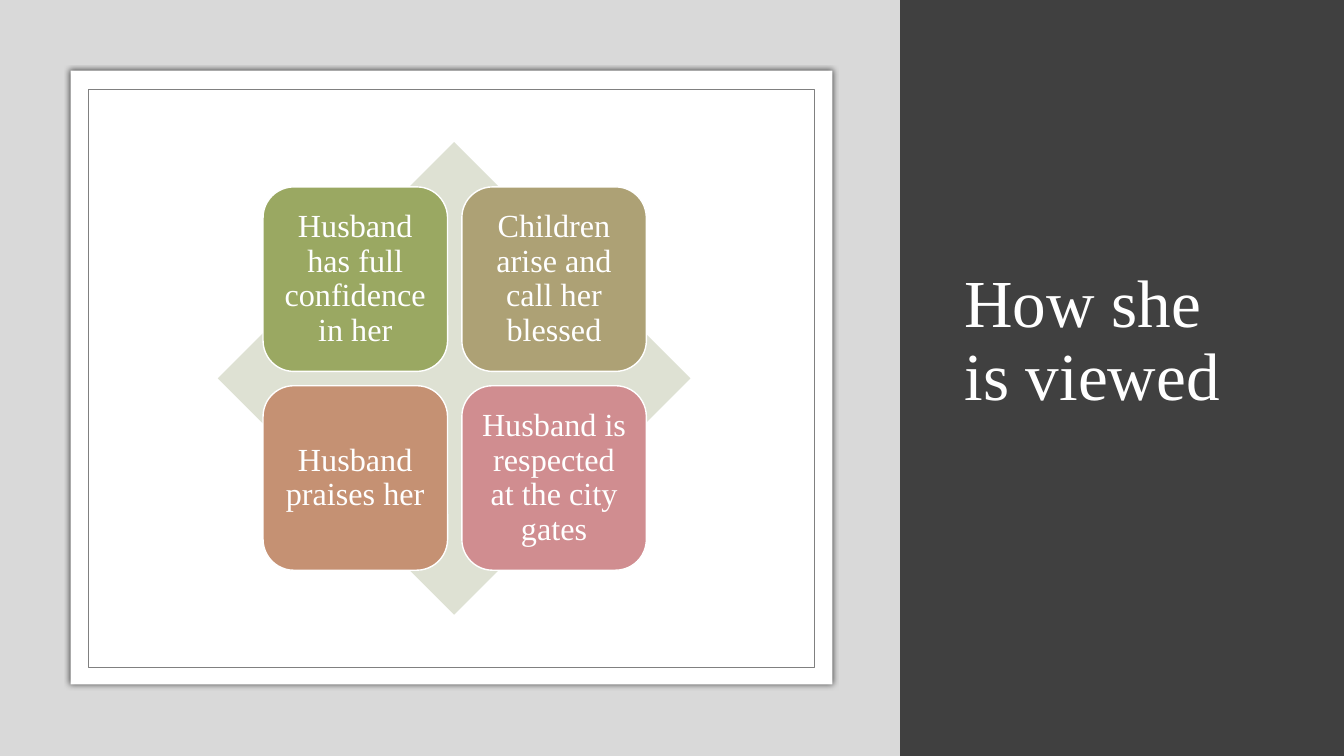
"""Builds the slide 'How she is viewed' with a four-tile matrix over a diamond."""
from lxml import etree
from pptx import Presentation
from pptx.dml.color import RGBColor
from pptx.enum.shapes import MSO_SHAPE
from pptx.enum.text import MSO_ANCHOR, MSO_AUTO_SIZE, PP_ALIGN
from pptx.oxml.ns import qn
from pptx.util import Cm, Pt

RECTANGLE = MSO_SHAPE.RECTANGLE
DIAMOND = MSO_SHAPE.DIAMOND
ROUNDED = MSO_SHAPE.ROUNDED_RECTANGLE
MIDDLE = MSO_ANCHOR.MIDDLE
NO_AUTOFIT = MSO_AUTO_SIZE.NONE
LEFT, CENTER = PP_ALIGN.LEFT, PP_ALIGN.CENTER

WIDTH, HEIGHT = 33.87, 19.05
TILE_SIZE, TILE_STEP = 4.65, 5.01
TILES_LEFT, TILES_TOP = 6.63, 4.71
VIEWS = [
    ("Husband has full confidence in her", "9AA862"),
    ("Children arise and call her blessed", "ADA175"),
    ("Husband praises her", "C59173"),
    ("Husband is respected at the city gates", "D08D90"),
]


def color(code):
    """Turn a hex string into a colour."""
    return RGBColor.from_string(code)


class SlideBuilder:
    """Holds the text style and the current slide."""

    font = "Times New Roman"
    text_color = "FFFFFF"

    def __init__(self, slide):
        """Start on the given slide."""
        self.slide = slide
        self.shapes = slide.shapes

    def panel(self, kind, left, top, width, height, fill, line=None, line_width=1, parent=None):
        """Add a filled shape, outlined only when a line colour is given."""
        shapes = parent.shapes if parent else self.shapes
        shape = shapes.add_shape(kind, Cm(left), Cm(top), Cm(width), Cm(height))
        shape.shadow.inherit = False
        shape.fill.solid()
        shape.fill.fore_color.rgb = color(fill)
        if line:
            shape.line.color.rgb = color(line)
            shape.line.width = Pt(line_width)
        else:
            shape.line.fill.background()
        return shape

    def glow(self, shape, code, opacity, blur):
        """Give a shape a soft shadow with no offset."""
        effects = shape._element.spPr.find(qn("a:effectLst"))
        shadow = etree.SubElement(effects, qn("a:outerShdw"), blurRad=str(Pt(blur)),
                                  dist="0", dir="0", algn="ctr", rotWithShape="0")
        tint = etree.SubElement(shadow, qn("a:srgbClr"), val=code)
        etree.SubElement(tint, qn("a:alpha"), val=str(opacity * 1000))

    def set_text(self, shape, text, size, align):
        """Set one styled paragraph in a shape."""
        frame = shape.text_frame
        frame.text = text
        frame.word_wrap = True
        frame.auto_size = NO_AUTOFIT
        frame.vertical_anchor = MIDDLE
        paragraph = frame.paragraphs[0]
        paragraph.alignment = align
        paragraph.line_spacing = 0.9
        font = paragraph.runs[0].font
        font.name = self.font
        font.size = Pt(size)
        font.color.rgb = color(self.text_color)
        return frame

    def title(self, text, left, top, width, height):
        """Place the title placeholder in front of the panels."""
        heading = self.shapes.title
        heading.left, heading.top = Cm(left), Cm(top)
        heading.width, heading.height = Cm(width), Cm(height)
        frame = self.set_text(heading, text, 48, LEFT)
        frame.margin_right = Cm(0.5)
        frame.margin_bottom = Cm(1.9)
        self.shapes._spTree.append(heading._element)

    def tile(self, text, fill, left, top, parent):
        """Add a rounded tile with centred text."""
        tile = self.panel(ROUNDED, left, top, TILE_SIZE, TILE_SIZE, fill, "FFFFFF", parent=parent)
        frame = self.set_text(tile, text, 23, CENTER)
        frame.margin_left = frame.margin_right = Cm(0.24)
        frame.margin_top = frame.margin_bottom = Cm(0.24)


def main():
    """Build and save the presentation."""
    deck = Presentation()
    deck.slide_width, deck.slide_height = Cm(WIDTH), Cm(HEIGHT)
    builder = SlideBuilder(deck.slides.add_slide(deck.slide_layouts[5]))

    builder.panel(RECTANGLE, 0, 0, WIDTH, HEIGHT, "404040")
    builder.title("How she is viewed", 24.05, 1.78, 8.03, 15.47)
    builder.panel(RECTANGLE, 0, 0, 22.68, HEIGHT, "D9D9D9")
    sheet = builder.panel(RECTANGLE, 1.78, 1.78, 19.2, 15.47, "FFFFFF")
    builder.glow(sheet, "000000", 66, 4)
    builder.panel(RECTANGLE, 2.24, 2.26, 18.29, 14.55, "FFFFFF", "808080", 0.5)

    matrix = builder.shapes.add_group_shape()
    builder.panel(DIAMOND, 5.49, 3.58, 11.91, 11.91, "DEE1D3", parent=matrix)
    for index, (view, fill) in enumerate(VIEWS):
        row, column = divmod(index, 2)
        builder.tile(view, fill, TILES_LEFT + column * TILE_STEP,
                     TILES_TOP + row * TILE_STEP, matrix)

    deck.save("out.pptx")


if __name__ == "__main__":
    main()
